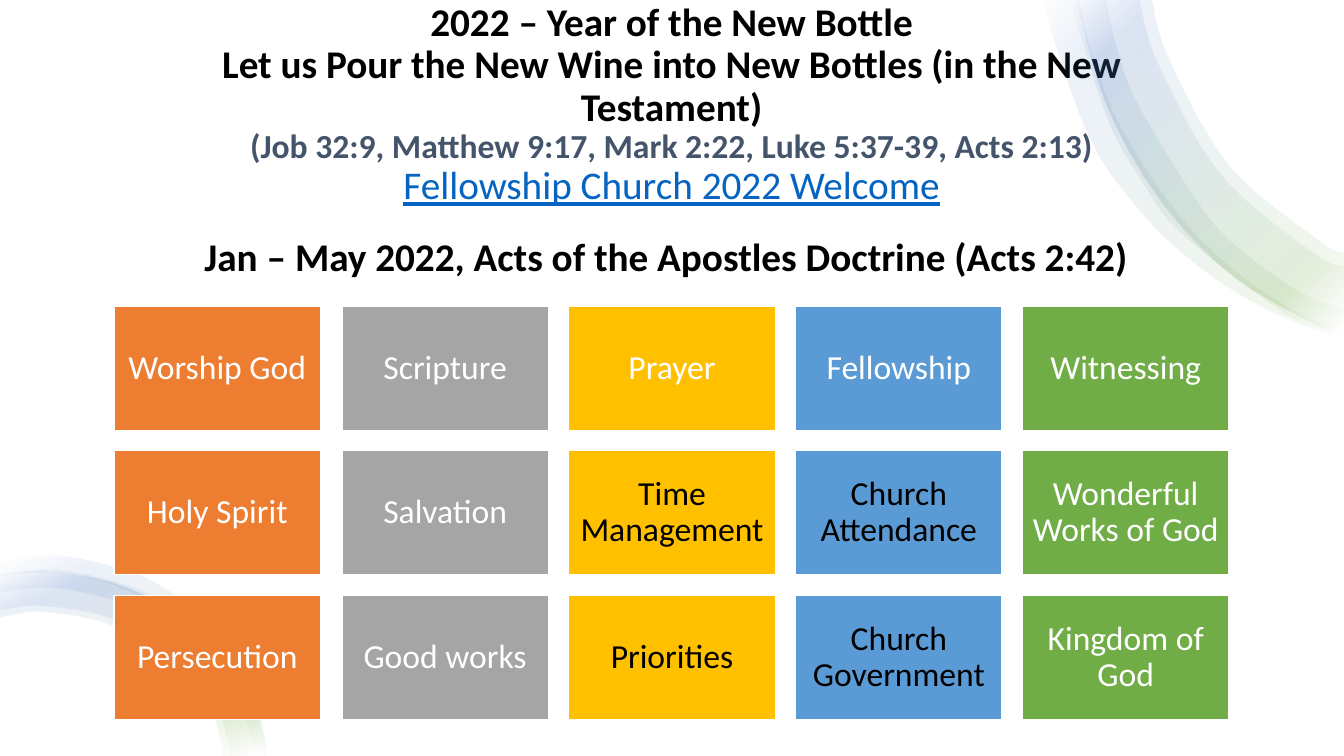
from copy import deepcopy
from dataclasses import dataclass
from itertools import product
from math import ceil

from lxml.etree import SubElement
from pptx import Presentation
from pptx.dml.color import RGBColor
from pptx.enum.shapes import MSO_SHAPE
from pptx.enum.text import MSO_ANCHOR, MSO_AUTO_SIZE, PP_ALIGN
from pptx.oxml.ns import qn
from pptx.util import Emu, Pt

EMU_PER_PX = 9144
SLIDE_W, SLIDE_H = 1333, 750
Points = tuple[tuple[int, int], ...]


@dataclass(frozen=True)
class Theme:
    font: str = "Calibri"
    heading: int = 28
    body: int = 24
    white: str = "FFFFFF"
    black: str = "000000"
    slate: str = "44546A"
    link: str = "0563C1"
    columns: tuple[str, ...] = ("ED7D31", "A5A5A5", "FFC000", "5B9BD5", "70AD47")
    ribbon_stops: tuple[tuple[int, str], ...] = (
        (2, "FFFFFF"), (16, "70AD47"), (85, "4472C4"), (100, "FFFFFF"))
    ribbon_opacity: int = 10


THEME = Theme()


@dataclass(frozen=True)
class TitleLine:
    text: str
    size: int = THEME.heading
    color: str = THEME.black
    bold: bool = True
    underline: bool = False


@dataclass(frozen=True)
class Ribbon:
    """A band between two smooth edges; angle is the clockwise gradient direction."""
    outer: Points
    inner: Points
    angle: int


@dataclass(frozen=True)
class Tile:
    text: str
    color: str = THEME.white


TITLE_LINES = (
    TitleLine("2022 – Year of the New Bottle"),
    TitleLine("Let us Pour the New Wine into New Bottles (in the New Testament)"),
    TitleLine("(Job 32:9, Matthew 9:17, Mark 2:22, Luke 5:37-39, Acts 2:13)",
              THEME.body, THEME.slate),
    TitleLine("Fellowship Church 2022 Welcome", color=THEME.link, bold=False, underline=True),
)

TOP_ANGLE, BOTTOM_ANGLE = 225, 245
TOP_ARC = ((1333, 332), (1309, 324), (1223, 274), (1152, 200), (1099, 107), (1069, 4), (1067, -9))
BOTTOM_ARC = ((263, 750), (262, 735), (236, 669), (185, 616), (117, 580), (40, 567), (0, 572))
RIBBONS = (
    Ribbon(((1333, 335), (1282, 319), (1221, 287), (1165, 245), (1116, 192), (1078, 131),
            (1041, 26), (1036, -9)),
           ((1068, -9), (1082, 52), (1106, 115), (1140, 173), (1181, 227), (1230, 273),
            (1286, 310), (1333, 328)), TOP_ANGLE),
    Ribbon(TOP_ARC, ((1141, -9), (1158, 55), (1219, 164), (1307, 238), (1333, 251)), TOP_ANGLE),
    Ribbon(((1333, 333), (1279, 314), (1173, 233), (1132, 179), (1099, 119), (1068, 20),
            (1063, -9)),
           ((1096, -9), (1107, 44), (1129, 104), (1195, 211), (1239, 255), (1290, 290),
            (1333, 308)), TOP_ANGLE),
    Ribbon(TOP_ARC, ((1129, -9), (1147, 59), (1210, 172), (1301, 250), (1333, 264)), TOP_ANGLE),
    Ribbon(BOTTOM_ARC, ((0, 613), (40, 607), (107, 619), (166, 652), (206, 700), (220, 741),
                        (220, 750)), BOTTOM_ANGLE),
    Ribbon(BOTTOM_ARC, ((0, 606), (40, 601), (109, 613), (170, 647), (212, 697), (227, 740),
                        (228, 750)), BOTTOM_ANGLE),
    Ribbon(((263, 750), (259, 719), (247, 685), (203, 627), (142, 587), (69, 567), (31, 566),
            (0, 571)),
           ((0, 588), (33, 584), (67, 585), (134, 603), (192, 639), (234, 691), (250, 738),
            (251, 750)), BOTTOM_ANGLE),
    Ribbon(((264, 750), (263, 740), (250, 687), (210, 623), (148, 575), (71, 553), (31, 553),
            (0, 559)),
           ((0, 572), (32, 568), (69, 570), (122, 584), (182, 617), (225, 658), (248, 695),
            (258, 722), (262, 750)), BOTTOM_ANGLE),
)

TILE_ROWS = (
    (Tile("Worship God"), Tile("Scripture"), Tile("Prayer"), Tile("Fellowship"),
     Tile("Witnessing")),
    (Tile("Holy Spirit"), Tile("Salvation"), Tile("Time Management", THEME.black),
     Tile("Church Attendance", THEME.black), Tile("Wonderful Works of God")),
    (Tile("Persecution"), Tile("Good works"), Tile("Priorities", THEME.black),
     Tile("Church Government", THEME.black), Tile("Kingdom of God")),
)
TILE_LEFT, TILE_TOP, TILE_W, TILE_H = 113, 304, 205, 123
GRID_SPAN_X, GRID_SPAN_Y = 901, 287


def px(n: float) -> Emu:
    return Emu(round(n * EMU_PER_PX))


def rgb(color: str) -> RGBColor:
    return RGBColor.from_string(color)


def set_all(target, **values) -> None:
    for name, value in values.items():
        setattr(target, name, value)


def add_run(p, text: str, size: int, color: str, **style):
    r = p.add_run()
    r.text = text
    set_all(r.font, name=THEME.font, size=Pt(size), **style)
    r.font.color.rgb = rgb(color)
    return r


def add_rect(s, x: int, y: int, w: int, h: int, color: str):
    sp = s.shapes.add_shape(MSO_SHAPE.RECTANGLE, px(x), px(y), px(w), px(h))
    sp.shadow.inherit = False
    sp.fill.solid()
    sp.fill.fore_color.rgb = rgb(color)
    return sp


def format_title(title) -> None:
    set_all(title, left=px(134), top=px(0), width=px(1064), height=px(209))
    tf = title.text_frame
    set_all(tf, word_wrap=True, vertical_anchor=MSO_ANCHOR.MIDDLE, auto_size=MSO_AUTO_SIZE.NONE)
    p = tf.paragraphs[0]
    set_all(p, alignment=PP_ALIGN.CENTER, line_spacing=0.9)
    for i, line in enumerate(TITLE_LINES):
        if i:
            p.add_line_break()
            p._p[-1].append(deepcopy(r._r.rPr))
        r = add_run(p, line.text, line.size, line.color, bold=line.bold, underline=line.underline)


def bezier_edge(knots: Points) -> list[Points]:
    """Give two handles and an end point for each stretch between knots."""
    padded = (knots[0], *knots, knots[-1])
    return [((b[0] + (c[0] - a[0]) / 6, b[1] + (c[1] - a[1]) / 6),
             (c[0] - (d[0] - b[0]) / 6, c[1] - (d[1] - b[1]) / 6), c)
            for a, b, c, d in zip(padded, padded[1:], padded[2:], padded[3:])]


def add_ribbon(s, ribbon: Ribbon) -> None:
    knots = [(px(x), px(y)) for x, y in ribbon.outer + ribbon.inner]
    builder = s.shapes.build_freeform(*knots[0])
    builder.add_line_segments(knots[1:], close=True)
    sp = builder.convert_to_shape()
    curves = bezier_edge(ribbon.outer) + [None] + bezier_edge(ribbon.inner)
    for line, curve in zip(list(sp._element.iter(qn("a:lnTo"))), curves):
        if curve:
            line.remove(line[0])
            line.tag = qn("a:cubicBezTo")
            for x, y in curve:
                SubElement(line, qn("a:pt"), x=str(px(x) - sp.left), y=str(px(y) - sp.top))
    sp.shadow.inherit = False
    sp.line.fill.background()
    sp.fill.gradient()
    sp.fill.gradient_angle = 360 - ribbon.angle
    stops = sp._element.spPr.find(qn("a:gradFill")).find(qn("a:gsLst"))
    for old in list(stops):
        stops.remove(old)
    for position, color in THEME.ribbon_stops:
        gs = SubElement(stops, qn("a:gs"), pos=str(position * 1000))
        clr = SubElement(gs, qn("a:srgbClr"), val=color)
        SubElement(clr, qn("a:alpha"), val=str(THEME.ribbon_opacity * 1000))


def add_tile(s, row: int, col: int) -> None:
    tile = TILE_ROWS[row][col]
    sp = add_rect(s, TILE_LEFT + ceil(col * GRID_SPAN_X / 4), TILE_TOP + row * GRID_SPAN_Y // 2,
                  TILE_W, TILE_H, THEME.columns[col])
    sp.line.color.rgb = rgb(THEME.white)
    sp.line.width = Pt(1)
    tf = sp.text_frame
    set_all(tf, word_wrap=True, vertical_anchor=MSO_ANCHOR.MIDDLE, margin_left=px(10),
            margin_right=px(10), margin_top=px(10), margin_bottom=px(10))
    p = tf.paragraphs[0]
    set_all(p, alignment=PP_ALIGN.CENTER, line_spacing=0.9)
    add_run(p, tile.text, THEME.body, tile.color)


def main() -> None:
    prs = Presentation()
    set_all(prs, slide_width=px(SLIDE_W), slide_height=px(SLIDE_H))
    s = prs.slides.add_slide(prs.slide_layouts.get_by_name("Title Only"))
    backdrop = add_rect(s, 0, 0, SLIDE_W, SLIDE_H, THEME.white)
    backdrop.line.fill.background()
    title = s.shapes.title
    backdrop._element.addnext(title._element)
    format_title(title)
    for ribbon in RIBBONS:
        add_ribbon(s, ribbon)
    for row, col in product(range(len(TILE_ROWS)), range(len(THEME.columns))):
        add_tile(s, row, col)
    series = s.shapes.add_textbox(px(193), px(226), px(947), px(57))
    series.text_frame.word_wrap = True
    add_run(series.text_frame.paragraphs[0],
            "Jan – May 2022, Acts of the Apostles Doctrine (Acts 2:42)",
            THEME.heading, THEME.black, bold=True)
    prs.save("out.pptx")


if __name__ == "__main__":
    main()
